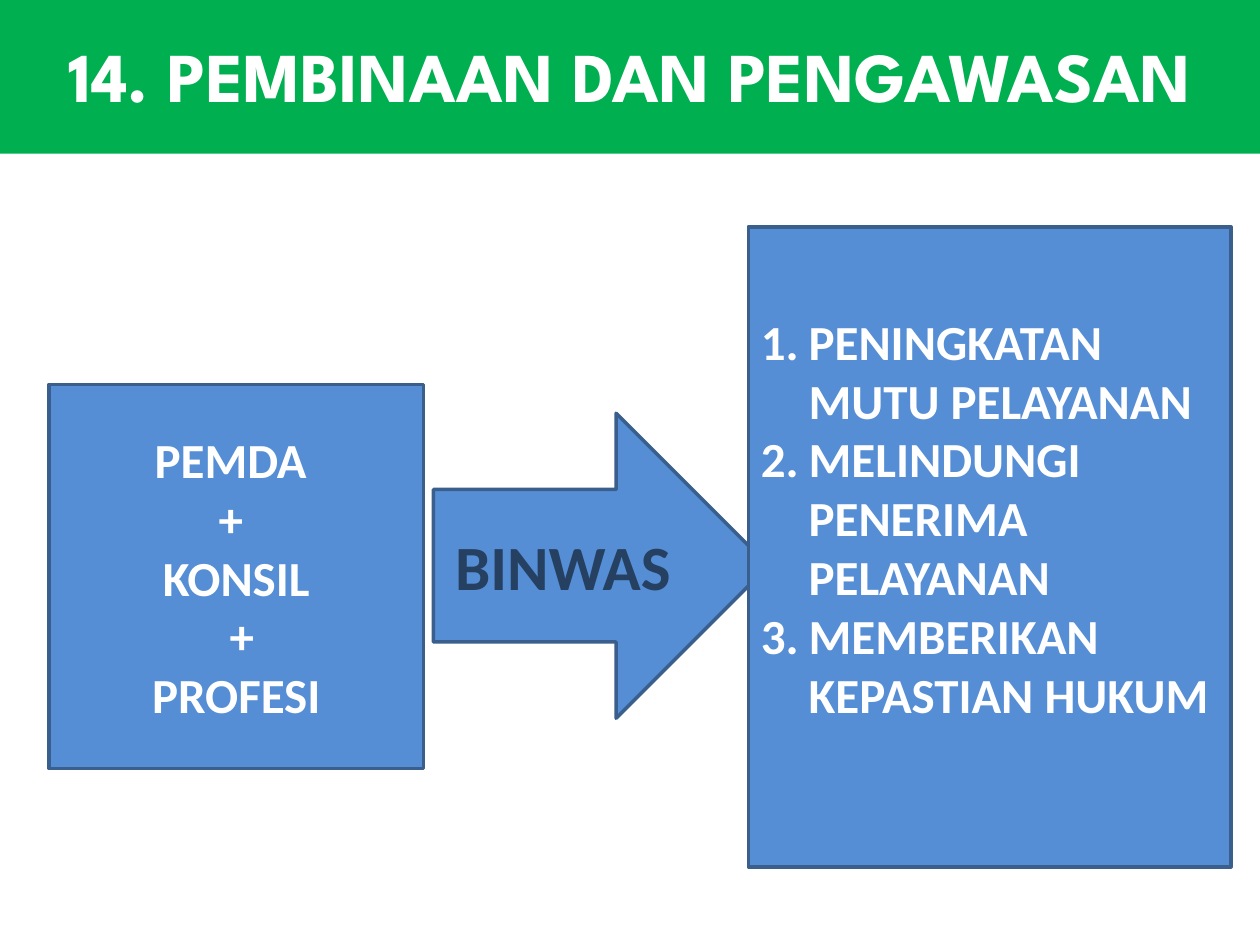
from dataclasses import dataclass

from pptx import Presentation
from pptx.dml.color import RGBColor
from pptx.enum.shapes import MSO_SHAPE
from pptx.enum.text import MSO_ANCHOR, PP_ALIGN
from pptx.oxml.xmlchemy import OxmlElement
from pptx.util import Inches, Pt


@dataclass(frozen=True)
class Theme:
    green: RGBColor = RGBColor(0x00, 0xB0, 0x50)
    blue: RGBColor = RGBColor(0x55, 0x8E, 0xD5)
    outline: RGBColor = RGBColor(0x3A, 0x5F, 0x8C)
    navy: RGBColor = RGBColor(0x25, 0x40, 0x61)
    white: RGBColor = RGBColor(0xFF, 0xFF, 0xFF)
    title_font: str = "League Spartan"
    body_font: str = "Calibri"
    title_size: int = 40
    label_size: int = 36
    body_size: int = 28


THEME = Theme()
SUPERVISORS = ["PEMDA ", "+ ", "KONSIL", " +", "PROFESI"]
GOALS = [
    "PENINGKATAN MUTU PELAYANAN",
    "MELINDUNGI PENERIMA PELAYANAN",
    "MEMBERIKAN KEPASTIAN HUKUM",
]


def number_paragraph(paragraph, indent=Inches(0.38)):
    """Give the paragraph an automatic number with a hanging indent."""
    properties = paragraph._p.get_or_add_pPr()
    properties.set("marL", str(indent))
    properties.set("indent", str(-indent))
    numbering = OxmlElement("a:buAutoNum")
    numbering.set("type", "arabicPeriod")
    properties.append(numbering)


def write_text(shape, lines, size=THEME.body_size, font=THEME.body_font,
               color=THEME.white, align=PP_ALIGN.CENTER, numbered=False):
    frame = shape.text_frame
    frame.word_wrap = True
    frame.vertical_anchor = MSO_ANCHOR.MIDDLE
    for index, line in enumerate(lines):
        paragraph = frame.add_paragraph() if index else frame.paragraphs[0]
        paragraph.alignment = align
        if numbered:
            number_paragraph(paragraph)
        run = paragraph.add_run()
        run.text = line
        run.font.name = font
        run.font.size = Pt(size)
        run.font.bold = True
        run.font.color.rgb = color


def add_block(slide, kind, left, top, width, height, fill=THEME.blue,
              outline=THEME.outline):
    shape = slide.shapes.add_shape(
        kind, Inches(left), Inches(top), Inches(width), Inches(height))
    shape.shadow.inherit = False
    shape.fill.solid()
    shape.fill.fore_color.rgb = fill
    if outline is None:
        shape.line.fill.background()
    else:
        shape.line.color.rgb = outline
        shape.line.width = Pt(2)
    return shape


def main():
    presentation = Presentation()
    presentation.slide_width = Inches(10)
    presentation.slide_height = Inches(7.5)
    slide = presentation.slides.add_slide(presentation.slide_layouts[6])

    title = add_block(slide, MSO_SHAPE.RECTANGLE, 0, -0.03, 10, 1.25,
                      fill=THEME.green, outline=None)
    write_text(title, ["14. PEMBINAAN DAN PENGAWASAN"],
               size=THEME.title_size, font=THEME.title_font)

    supervisors = add_block(slide, MSO_SHAPE.RECTANGLE, 0.39, 3.05, 2.97, 3.05)
    write_text(supervisors, SUPERVISORS)

    arrow = add_block(slide, MSO_SHAPE.RIGHT_ARROW, 3.44, 3.28, 2.66, 2.42)
    write_text(arrow, ["BINWAS"], size=THEME.label_size, color=THEME.navy)

    goals = add_block(slide, MSO_SHAPE.RECTANGLE, 5.94, 1.8, 3.83, 5.08)
    goals.text_frame.margin_bottom = Inches(0.52)
    write_text(goals, GOALS, align=PP_ALIGN.LEFT, numbered=True)

    presentation.save("out.pptx")


if __name__ == "__main__":
    main()
